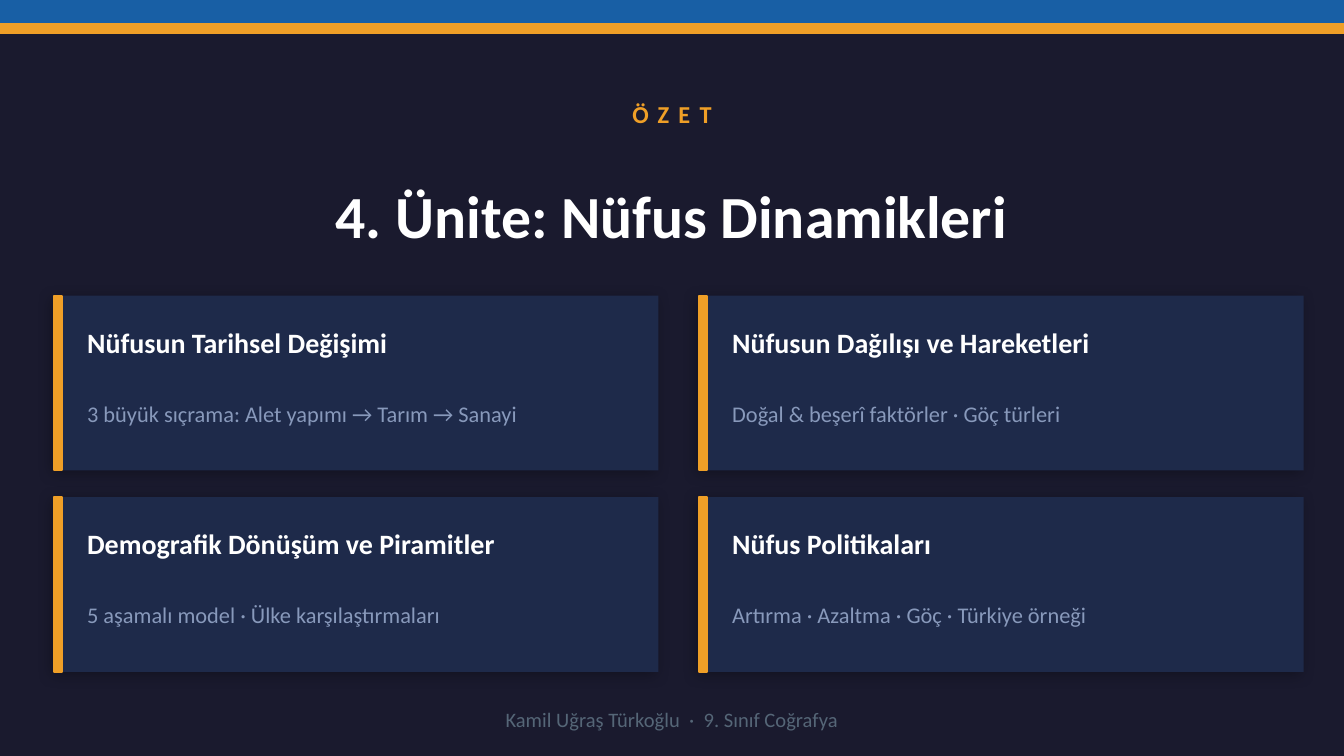
import pptx
import pptx.util
import pptx.dml.color
import pptx.enum.shapes
import pptx.enum.text
import pptx.oxml
import pptx.oxml.ns

Inches, Pt = pptx.util.Inches, pptx.util.Pt
RGBColor = pptx.dml.color.RGBColor
PP_ALIGN = pptx.enum.text.PP_ALIGN

NIGHT = RGBColor(0x1A, 0x1A, 0x2E)
NAVY = RGBColor(0x1E, 0x2A, 0x4A)
BLUE = RGBColor(0x18, 0x5F, 0xA5)
ORANGE = RGBColor(0xEF, 0x9F, 0x27)
WHITE = RGBColor(0xFF, 0xFF, 0xFF)
MUTED = RGBColor(0x88, 0x99, 0xBB)
SLATE = RGBColor(0x55, 0x66, 0x77)

# Slide size and card grid, in inches
W, H = 10, 10 * 9 / 16
MARGIN = 0.5
CARD_LEFT, CARD_TOP, CARD_W, CARD_H = 0.4, 2.2, 4.5, 1.3
COL_STEP, ROW_STEP = CARD_W + 0.3, CARD_H + 0.2

CARDS = [
    ("Nüfusun Tarihsel Değişimi", "3 büyük sıçrama: Alet yapımı → Tarım → Sanayi"),
    ("Nüfusun Dağılışı ve Hareketleri", "Doğal & beşerî faktörler · Göç türleri"),
    ("Demografik Dönüşüm ve Piramitler", "5 aşamalı model · Ülke karşılaştırmaları"),
    ("Nüfus Politikaları", "Artırma · Azaltma · Göç · Türkiye örneği"),
]

SHADOW = (
    f'<a:effectLst {pptx.oxml.ns.nsdecls("a")}>'
    '<a:outerShdw blurRad="101600" dist="25400" dir="8100000" algn="bl" rotWithShape="0">'
    '<a:srgbClr val="000000"><a:alpha val="30000"/></a:srgbClr>'
    '</a:outerShdw></a:effectLst>'
)

prs = pptx.Presentation()
prs.slide_width, prs.slide_height = Inches(W), Inches(H)
s = prs.slides.add_slide(prs.slide_layouts[5])
s.background.fill.solid()
s.background.fill.fore_color.rgb = NIGHT


def add_rect(x, y, w, h, color, outlined=True):
    sp = s.shapes.add_shape(pptx.enum.shapes.MSO_SHAPE.RECTANGLE,
                            Inches(x), Inches(y), Inches(w), Inches(h))
    sp.fill.solid()
    sp.fill.fore_color.rgb = color
    if outlined:
        sp.line.color.rgb = color
        sp.line.width = Pt(1)
    else:
        sp.line.fill.background()
    sp.shadow.inherit = False
    return sp


def add_text(x, y, w, h, text, size, color, bold=False, align=PP_ALIGN.LEFT, sp=None):
    sp = sp or s.shapes.add_textbox(0, 0, 0, 0)
    sp.left, sp.top, sp.width, sp.height = Inches(x), Inches(y), Inches(w), Inches(h)
    tf = sp.text_frame
    tf.text = text
    tf.word_wrap = True
    tf.auto_size = pptx.enum.text.MSO_AUTO_SIZE.NONE
    tf.vertical_anchor = pptx.enum.text.MSO_ANCHOR.MIDDLE
    p = tf.paragraphs[0]
    p.alignment = align
    r = p.runs[0]
    r.font.name, r.font.size, r.font.bold = "Calibri", Pt(size), bold
    r.font.color.rgb = color
    return r


# Top bands
add_rect(0, 0, W, 0.18, BLUE)
add_rect(0, 0.18, W, 0.07, ORANGE)

# Heading
full = W - 2 * MARGIN
r = add_text(MARGIN, 0.6, full, 0.5, "ÖZET", 13, ORANGE, True, PP_ALIGN.CENTER)
r.font._element.set("spc", "500")
add_text(MARGIN, 1.2, full, 0.8, "4. Ünite: Nüfus Dinamikleri", 32, WHITE, True,
         PP_ALIGN.CENTER, s.shapes.title)

# Summary cards, two per row
for i, (heading, detail) in enumerate(CARDS):
    row, col = divmod(i, 2)
    x, y = CARD_LEFT + col * COL_STEP, CARD_TOP + row * ROW_STEP
    card = add_rect(x, y, CARD_W, CARD_H, NAVY, outlined=False)
    spPr = card._element.spPr
    spPr.replace(spPr.find(pptx.oxml.ns.qn("a:effectLst")), pptx.oxml.parse_xml(SHADOW))
    add_rect(x, y, 0.06, CARD_H, ORANGE)
    add_text(x + 0.15, y + 0.12, CARD_W - 0.3, 0.45, heading, 15, WHITE, True)
    add_text(x + 0.15, y + 0.6, CARD_W - 0.3, 0.55, detail, 12, MUTED)

# Footer
add_text(MARGIN, 5.2, full, 0.3, "Kamil Uğraş Türkoğlu  ·  9. Sınıf Coğrafya", 11, SLATE,
         align=PP_ALIGN.CENTER)

prs.save("out.pptx")
